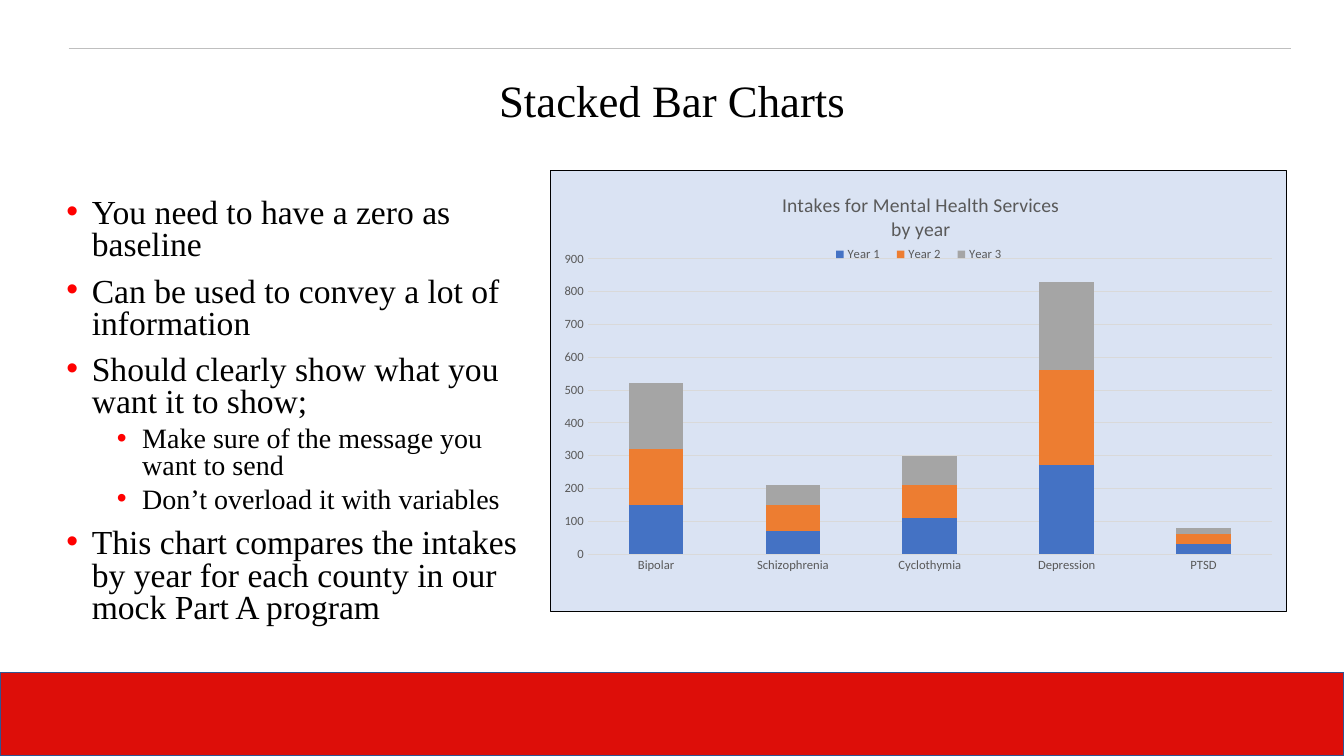
import lxml.etree
import pptx
import pptx.chart.data
import pptx.dml.color
import pptx.enum.chart
import pptx.enum.shapes
import pptx.enum.text
import pptx.oxml
import pptx.oxml.ns
import pptx.util

Cm = pptx.util.Cm
Pt = pptx.util.Pt
RGBColor = pptx.dml.color.RGBColor
qn = pptx.oxml.ns.qn

BLACK = RGBColor(0x00, 0x00, 0x00)
BAND_RED = RGBColor(0xDD, 0x0E, 0x09)
BAND_EDGE = RGBColor(0x32, 0x54, 0x91)
RULE_GREY = RGBColor(0xBF, 0xBF, 0xBF)
BULLET_RED = RGBColor(0xFF, 0x00, 0x00)
CHART_TEXT = RGBColor(0x59, 0x59, 0x59)
GRID_GREY = RGBColor(0xD9, 0xD9, 0xD9)
CHART_FILL = RGBColor(0xDA, 0xE3, 0xF3)

TEXT_FONT = "Times New Roman"
CHART_FONT = "Calibri"
SLIDE_WIDTH, SLIDE_HEIGHT = Cm(33.87), Cm(19.05)

# Text and indent level of each bullet
BULLETS = [
    ("You need to have a zero as baseline", 0),
    ("Can be used to convey a lot of information", 0),
    ("Should clearly show what you want it to show;", 0),
    ("Make sure of the message you want to send", 1),
    ("Don’t overload it with variables", 1),
    ("This chart compares the intakes by year for each county in our mock Part A program", 0),
]
# Left margin, text size and space before for each indent level
LEVELS = [(Cm(0.64), Pt(24), Pt(10)), (Cm(1.91), Pt(20), Pt(5))]

CATEGORIES = ["Bipolar", "Schizophrenia", "Cyclothymia", "Depression", "PTSD"]
SERIES = [
    ("Year 1", [150, 70, 110, 270, 30], RGBColor(0x44, 0x72, 0xC4)),
    ("Year 2", [170, 80, 100, 290, 30], RGBColor(0xED, 0x7D, 0x31)),
    ("Year 3", [200, 60, 90, 270, 20], RGBColor(0xA5, 0xA5, 0xA5)),
]


def format_font(font, name, size, color):
    font.name = name
    font.size = size
    font.bold = False
    font.color.rgb = color


def place(shape, left, top, width, height):
    shape.left, shape.top, shape.width, shape.height = left, top, width, height


def add_frame(slide, left, top, width, height, band_height):
    """Rule along the top of the box and band along its bottom."""
    band = slide.shapes.add_shape(
        pptx.enum.shapes.MSO_SHAPE.RECTANGLE,
        left, top + height - band_height, width, band_height)
    band.shadow.inherit = False
    band.fill.solid()
    band.fill.fore_color.rgb = BAND_RED
    band.line.color.rgb = BAND_EDGE
    band.line.width = Pt(1)

    rule_top = top + Cm(1.22)
    rule = slide.shapes.add_connector(
        pptx.enum.shapes.MSO_CONNECTOR.STRAIGHT,
        left + Cm(1.73), rule_top, left + width - Cm(1.33), rule_top)
    rule.line.color.rgb = RULE_GREY
    rule.line.width = Pt(0.5)
    lxml.etree.SubElement(rule.element.spPr, qn("a:effectLst"))


def fill_title(title, left, top, width, height):
    place(title, left, top, width, height)
    frame = title.text_frame
    frame.text = "Stacked Bar Charts"
    frame.auto_size = pptx.enum.text.MSO_AUTO_SIZE.NONE
    frame.vertical_anchor = pptx.enum.text.MSO_ANCHOR.MIDDLE
    paragraph = frame.paragraphs[0]
    paragraph.alignment = pptx.enum.text.PP_ALIGN.CENTER
    paragraph.line_spacing = 0.9
    format_font(paragraph.runs[0].font, TEXT_FONT, Pt(32), BLACK)


def add_bullet(paragraph, margin):
    properties = paragraph._p.get_or_add_pPr()
    properties.set("marL", str(margin))
    properties.set("indent", str(-Cm(0.64)))
    color = lxml.etree.SubElement(properties, qn("a:buClr"))
    lxml.etree.SubElement(color, qn("a:srgbClr"), val=str(BULLET_RED))
    lxml.etree.SubElement(properties, qn("a:buFont"), typeface="Arial")
    lxml.etree.SubElement(properties, qn("a:buChar"), char="•")


def fill_bullets(body, left, top, width, height):
    place(body, left, top, width, height)
    frame = body.text_frame
    frame.text = "\n".join(text for text, level in BULLETS)
    frame.auto_size = pptx.enum.text.MSO_AUTO_SIZE.NONE
    frame.vertical_anchor = pptx.enum.text.MSO_ANCHOR.TOP
    for index, (paragraph, (text, level)) in enumerate(zip(frame.paragraphs, BULLETS)):
        margin, size, space = LEVELS[level]
        paragraph.level = level
        add_bullet(paragraph, margin)
        paragraph.alignment = pptx.enum.text.PP_ALIGN.LEFT
        paragraph.line_spacing = 0.8
        paragraph.space_before = space if index else Pt(0)
        paragraph.space_after = Pt(0)
        format_font(paragraph.runs[0].font, TEXT_FONT, size, BLACK)


def set_layout(element, position, target=None, **fractions):
    """Place a chart part by fractions of the chart area."""
    for old_layout in element.findall(qn("c:layout")):
        element.remove(old_layout)
    layout = lxml.etree.Element(qn("c:layout"))
    manual = lxml.etree.SubElement(layout, qn("c:manualLayout"))
    if target:
        lxml.etree.SubElement(manual, qn("c:layoutTarget"), val=target)
    for mode in ("xMode", "yMode"):
        lxml.etree.SubElement(manual, qn("c:" + mode), val="edge")
    for name, value in fractions.items():
        lxml.etree.SubElement(manual, qn("c:" + name), val=str(value))
    element.insert(position, layout)


def style_chart_area(chart):
    area = pptx.oxml.parse_xml(
        f'<c:spPr {pptx.oxml.ns.nsdecls("c", "a")}>'
        f'<a:solidFill><a:srgbClr val="{CHART_FILL}"/></a:solidFill>'
        f'<a:ln w="{Pt(0.75)}"><a:solidFill><a:srgbClr val="{BLACK}"/></a:solidFill></a:ln>'
        '</c:spPr>')
    chart.element.find(qn("c:chart")).addnext(area)


def add_intake_chart(slide, left, top, width, height):
    data = pptx.chart.data.CategoryChartData()
    data.categories = CATEGORIES
    for name, values, color in SERIES:
        data.add_series(name, values)
    chart = slide.shapes.add_chart(
        pptx.enum.chart.XL_CHART_TYPE.COLUMN_STACKED,
        left, top, width, height, data).chart
    format_font(chart.font, CHART_FONT, Pt(10), BLACK)
    style_chart_area(chart)

    # Columns
    plot = chart.plots[0]
    plot.gap_width = 150
    plot.overlap = 100
    plot.vary_by_categories = False
    for series, (name, values, color) in zip(plot.series, SERIES):
        series.format.fill.solid()
        series.format.fill.fore_color.rgb = color
    plot_area = chart.element.find(qn("c:chart")).find(qn("c:plotArea"))
    set_layout(plot_area, 0, "inner", x=0.05, y=0.2, w=0.93, h=0.67)

    # Axes
    for axis in (chart.category_axis, chart.value_axis):
        axis.major_tick_mark = pptx.enum.chart.XL_TICK_MARK.NONE
        axis.minor_tick_mark = pptx.enum.chart.XL_TICK_MARK.NONE
        format_font(axis.tick_labels.font, CHART_FONT, Pt(9), CHART_TEXT)
    chart.value_axis.minimum_scale = 0
    chart.value_axis.maximum_scale = 900
    chart.value_axis.major_unit = 100
    chart.value_axis.format.line.fill.background()
    for line in (chart.category_axis.format.line,
                 chart.value_axis.major_gridlines.format.line):
        line.color.rgb = GRID_GREY
        line.width = Pt(0.75)

    # Title
    title = chart.chart_title
    title.text_frame.text = "Intakes for Mental Health Services\nby year"
    for paragraph in title.text_frame.paragraphs:
        format_font(paragraph.runs[0].font, CHART_FONT, Pt(14), CHART_TEXT)
    title.include_in_layout = False
    set_layout(title._element, 1, x=0.31, y=0.04)

    # Legend
    chart.has_legend = True
    chart.legend.position = pptx.enum.chart.XL_LEGEND_POSITION.BOTTOM
    chart.legend.include_in_layout = False
    format_font(chart.legend.font, CHART_FONT, Pt(9), CHART_TEXT)
    set_layout(chart.legend._element, 1, x=0.37, y=0.16, w=0.26, h=0.06)


def main():
    presentation = pptx.Presentation()
    presentation.slide_width = SLIDE_WIDTH
    presentation.slide_height = SLIDE_HEIGHT
    slide = presentation.slides.add_slide(presentation.slide_layouts[1])
    add_frame(slide, 0, 0, SLIDE_WIDTH, SLIDE_HEIGHT, Cm(2.1))
    fill_title(slide.shapes.title, Cm(2.34), Cm(1.57), Cm(29.2), Cm(2.06))
    fill_bullets(slide.placeholders[1], Cm(1.42), Cm(4.88), Cm(12.45), Cm(11))
    add_intake_chart(slide, Cm(13.87), Cm(4.29), Cm(18.57), Cm(11.13))
    presentation.save("out.pptx")


if __name__ == "__main__":
    main()
